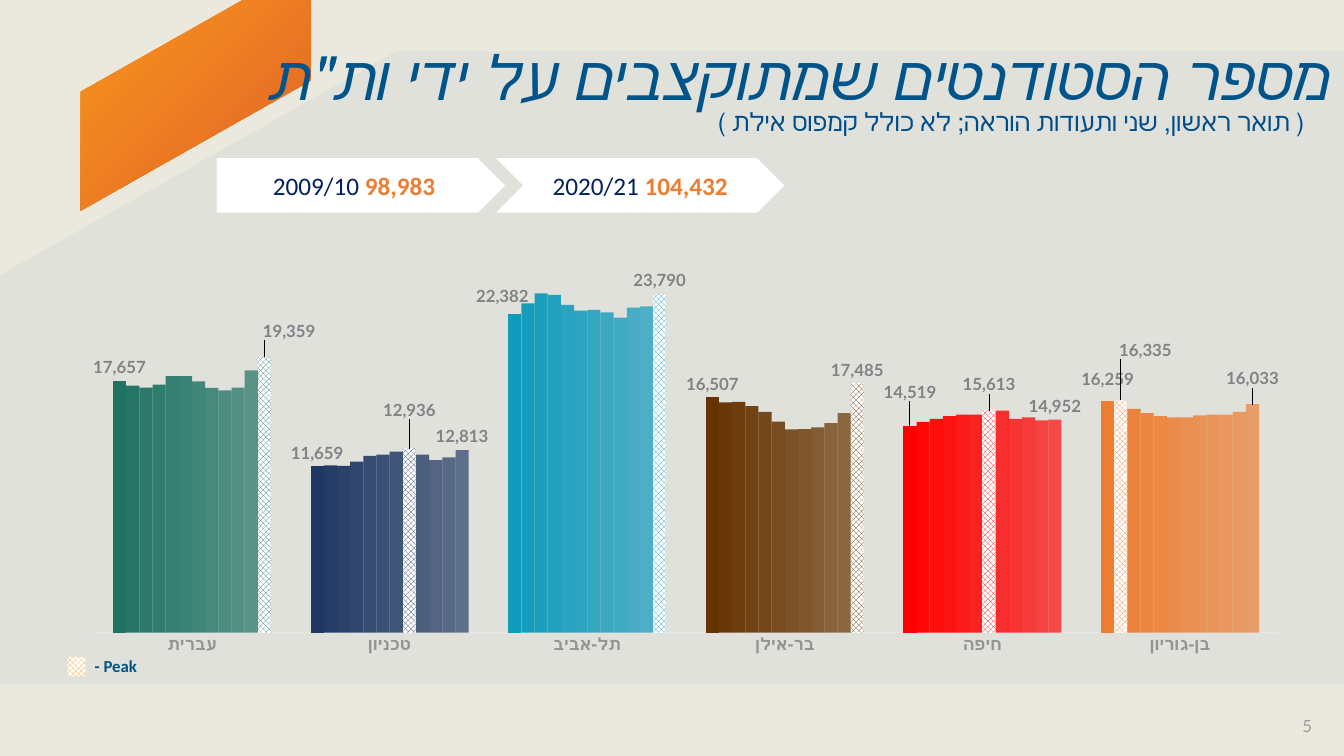
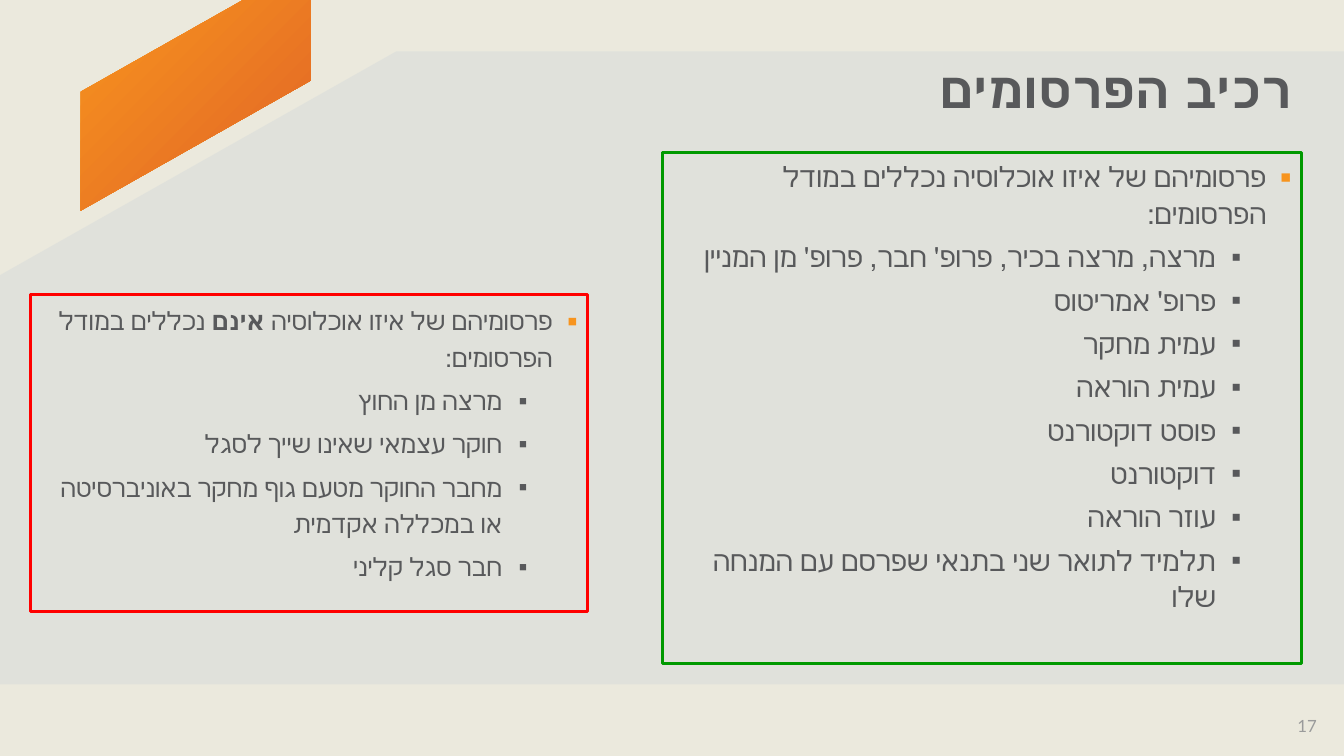
from lxml import etree
from pptx import Presentation
from pptx.chart.data import CategoryChartData
from pptx.dml.color import RGBColor
from pptx.enum.chart import XL_CHART_TYPE, XL_LABEL_POSITION, XL_TICK_MARK
from pptx.enum.dml import MSO_PATTERN
from pptx.enum.shapes import MSO_SHAPE
from pptx.enum.text import MSO_ANCHOR, MSO_AUTO_SIZE, PP_ALIGN
from pptx.oxml import parse_xml
from pptx.oxml.ns import nsdecls, qn
from pptx.util import Inches, Pt

LEFT, MID, RIGHT = PP_ALIGN.LEFT, PP_ALIGN.CENTER, PP_ALIGN.RIGHT
MIDDLE = MSO_ANCHOR.MIDDLE
FIXED = MSO_AUTO_SIZE.NONE
RECT, PLATE, CHEVRON = MSO_SHAPE.RECTANGLE, MSO_SHAPE.PENTAGON, MSO_SHAPE.CHEVRON
CHECK = MSO_PATTERN.LARGE_CHECKER_BOARD
COLUMN = XL_CHART_TYPE.COLUMN_CLUSTERED
OUTSIDE = XL_LABEL_POSITION.OUTSIDE_END
NO_TICK = XL_TICK_MARK.NONE

rgb = RGBColor.from_string
SAND, MIST, WHITE = "EBE9DD", "CFD6DA", "FFFFFF"
AMBER, RUST, ORANGE = "F7941E", "E16327", "ED7D31"
INK, BLUE, NAVY = "58595B", "005489", "002060"


def paint(fill, tint, alpha=100, check=False):
    if check:
        fill.patterned()
        fill.pattern = CHECK
        fill.fore_color.rgb = rgb(tint)
        fill.back_color.rgb = rgb(WHITE)
        return
    fill.solid()
    fill.fore_color.rgb = rgb(tint)
    if alpha < 100:
        node = fill._xPr.find(".//" + qn("a:srgbClr"))
        etree.SubElement(node, qn("a:alpha"), val=str(alpha * 1000))


def style(para, face, size, tint, side):
    para.alignment = side
    if side == RIGHT:
        para._p.get_or_add_pPr().set("rtl", "1")
    font = para.font
    font.name, font.size = face, Pt(size)
    font.color.rgb = rgb(tint)
    return font


prs = Presentation()
prs.slide_width, prs.slide_height = Inches(13.33), Inches(7.5)
paint(prs.slide_master.background.fill, SAND)

bands = [
    (AMBER, [(0.73, 7), (12.6, 7), (12.6, 7.5), (0.73, 7.5)]),
    (MIST, [(13.33, 0.51), (13.33, 6.79), (0, 6.79), (0, 2.73), (3.93, 0.51)]),
    (SAND, [(0, 6.89), (13.33, 6.89), (13.33, 7.5), (0, 7.5)]),
    (RUST, [(2.41, 0), (3.08, 0), (3.08, 0.8), (0.8, 2.09), (0.8, 0.91)]),
]
pages = [
    ("5", "מספר הסטודנטים שמתוקצבים על ידי ות\"ת", (2.16, 0.33, 11.12, 0.84),
     "Calibri", 44, BLUE, False),
    ("17", "רכיב הפרסומים", (1.18, 0.49, 11.73, 0.85), "Lato", 36, INK, True),
]
deck = []
for num, head, spot, face, size, tint, bold in pages:
    slide = prs.slides.add_slide(prs.slide_layouts[5])
    shapes = slide.shapes
    for shade, points in bands:
        if len(points) == 4:
            (x, y), (right, low) = points[0], points[2]
            form = shapes.add_shape(RECT, *map(Inches, (x, y, right - x, low - y)))
        else:
            dots = [(Inches(x), Inches(y)) for x, y in points]
            pen = shapes.build_freeform(*dots[0])
            pen.add_line_segments(dots[1:], close=True)
            form = pen.convert_to_shape()
        form.shadow.inherit = False
        form.line.fill.background()
        if shade == RUST:
            form.fill.gradient()
            form.fill.gradient_angle = 315
            for stop, hue in zip(form.fill.gradient_stops, (AMBER, RUST)):
                stop.color.rgb = rgb(hue)
        else:
            paint(form.fill, shade, 38 if shade == MIST else 100)

    title = shapes.title
    shapes._spTree.append(title._element)
    title.left, title.top, title.width, title.height = map(Inches, spot)
    frame = title.text_frame
    frame.text = head
    frame.vertical_anchor, frame.auto_size = MIDDLE, FIXED
    if bold:
        frame.paragraphs[0].line_spacing = 0.9
    font = style(frame.paragraphs[0], face, size, tint, RIGHT)
    font.bold, font.italic = bold, not bold

    frame = shapes.add_textbox(*map(Inches, (12.6, 7, 0.73, 0.4))).text_frame
    frame.text, frame.vertical_anchor = num, MIDDLE
    style(frame.paragraphs[0], "Lato", 12, "9A9B9B", MID)
    deck.append(shapes)

shapes = deck[0]
notes = [
    ("( תואר ראשון, שני ותעודות הוראה; לא כולל קמפוס אילת )",
     (2.02, 1.01, 11.02, 0.4), 18, "004D8C", RIGHT),
    ("- Peak", (0.84, 6.46, 0.8, 0.3), 12, BLUE, LEFT),
]
for words, spot, size, tint, side in notes:
    frame = shapes.add_textbox(*map(Inches, spot)).text_frame
    frame.word_wrap, frame.text = True, words
    style(frame.paragraphs[0], "Calibri", size, tint, side).bold = side == LEFT

key = shapes.add_shape(RECT, *map(Inches, (0.67, 6.52, 0.18, 0.19)))
key.shadow.inherit = False
key.line.fill.background()
paint(key.fill, AMBER, check=True)

years = [(PLATE, 2.15, "2009/10 ", "98,983"), (CHEVRON, 4.92, "2020/21 ", "104,432")]
for kind, left, year, count in years:
    arrow = shapes.add_shape(kind, *map(Inches, (left, 1.57, 2.86, 0.54)))
    arrow.shadow.inherit = False
    arrow.line.fill.background()
    paint(arrow.fill, WHITE)
    arrow.text_frame.vertical_anchor = MIDDLE
    para = arrow.text_frame.paragraphs[0]
    style(para, "Calibri", 18, NAVY, MID)
    for words, tint in ((year, NAVY), (count, ORANGE)):
        run = para.add_run()
        run.text = words
        run.font.color.rgb = rgb(tint)
        run.font.bold = tint == ORANGE

schools = [
    ("עברית", "1F7363", 11),
    ("טכניון", "1F3763", 7),
    ("תל-אביב", "109BBC", 11),
    ("בר-אילן", "663300", 11),
    ("חיפה", "FF0000", 6),
    ("בן-גוריון", ORANGE, 1),
]
counts = [
    (17657, 11659, 22382, 16507, 14519, 16259),
    (17332, 11734, 23102, 16161, 14783, 16335),
    (17200, 11700, 23800, 16200, 15000, 15700),
    (17400, 12000, 23700, 15900, 15200, 15400),
    (18000, 12400, 23000, 15500, 15300, 15200),
    (18000, 12500, 22600, 14800, 15300, 15100),
    (17628, 12707, 22643, 14259, 15613, 15108),
    (17169, 12936, 22473, 14280, 15578, 15248),
    (17000, 12500, 22100, 14400, 15000, 15300),
    (17200, 12100, 22800, 14700, 15100, 15300),
    (18400, 12300, 22900, 15400, 14900, 15500),
    (19359, 12813, 23790, 17485, 14952, 16033),
]
hues = [AMBER, RUST, "F37421", "828487", "A5A7A9", MIST,
        "A05A06", "8B3A13", "9D4308", "1F7363", "626466", "6F8490"]
shifts = {
    (0, 2): (-0.01, -0.01), (0, 4): (0, -0.05), (0, 5): (0, -0.02),
    (1, 5): (0.02, -0.09), (6, 4): (0, -0.03), (7, 1): (0, -0.06),
    (11, 0): (0.02, -0.03), (11, 5): (0, -0.03),
}
data = CategoryChartData(number_format="#,##0")
data.categories = [school[0] for school in schools]
for i, row in enumerate(counts):
    data.add_series(f"Series {i + 1}", row)
chart = shapes.add_chart(COLUMN, *map(Inches, (0.68, 2.52, 12.25, 4.04)), data).chart
chart.has_legend = chart.has_title = False
chart.font.name, chart.font.size, chart.font.bold = "Lato", Pt(12), True
chart.font.color.rgb = rgb("818285")
axis = chart.value_axis
axis.visible = axis.has_major_gridlines = False
axis.minimum_scale, axis.maximum_scale = 0, 26000
axis = chart.category_axis
axis.major_tick_mark = axis.minor_tick_mark = NO_TICK
axis.format.line.color.rgb = rgb("E6E6E7")
axis.format.line.width = Pt(0.75)
font = axis.tick_labels.font
font.name, font.size, font.bold = "Lato", Pt(12), True
font.color.rgb = rgb("929395")

plot = chart.plots[0]
plot.gap_width, plot.overlap, plot.vary_by_categories = 300, 0, False
area = plot._element.getparent()
for old in area.findall(qn("c:layout")):
    area.remove(old)
area.insert(0, parse_xml(
    f'<c:layout {nsdecls("c")}><c:manualLayout><c:layoutTarget val="inner"/>'
    '<c:xMode val="edge"/><c:yMode val="edge"/><c:x val="0.02"/><c:y val="0.02"/>'
    '<c:w val="0.96"/><c:h val="0.91"/></c:manualLayout></c:layout>'))

last = len(counts) - 1
tagged = {0, last} | {school[2] for school in schools}
for i, series in enumerate(plot.series):
    paint(series.format.fill, hues[i])
    for j, (name, tint, peak) in enumerate(schools):
        point = series.points[j]
        paint(point.format.fill, tint, 100 - 3 * i, i == peak)
        if i not in (0, peak, last) or (i == 0 and j < 2):
            continue
        point.data_label.position = OUTSIDE
        if (i, j) in shifts:
            dx, dy = shifts[i, j]
            label = point.data_label._get_or_add_dLbl()
            for old in label.findall(qn("c:layout")):
                label.remove(old)
            label.insert(1, parse_xml(
                f'<c:layout {nsdecls("c")}><c:manualLayout><c:x val="{dx}"/>'
                f'<c:y val="{dy}"/></c:manualLayout></c:layout>'))
    if i not in tagged:
        continue
    labels = series.data_labels
    labels.show_value = i == 0
    if i == 0:
        labels.position = OUTSIDE
    labels._element.append(parse_xml(
        f'<c:extLst {nsdecls("c")}><c:ext uri="{{CE6537A1-D6FC-4f65-9D91-7224C49458BB}}" '
        'xmlns:c15="http://schemas.microsoft.com/office/drawing/2012/chart">'
        f'<c15:showLeaderLines val="{int(i > 0)}"/></c:ext></c:extLst>'))

shapes = deck[1]
lists = [
    ((6.57, 1.51, 6.34, 5.07), "009900", "Lato", 20,
     ["פרסומיהם של איזו אוכלוסיה נכללים במודל הפרסומים:"],
     ["מרצה, מרצה בכיר, פרופ' חבר, פרופ' מן המניין", "פרופ' אמריטוס",
      "עמית מחקר", "עמית הוראה", "פוסט דוקטורנט", "דוקטורנט", "עוזר הוראה",
      "תלמיד לתואר שני בתנאי שפרסם עם המנחה שלו"]),
    ((0.3, 2.92, 5.53, 3.15), "FF0000", "Calibri", 18,
     ["פרסומיהם של איזו אוכלוסיה ", "אינם", " נכללים במודל הפרסומים:"],
     ["מרצה מן החוץ", "חוקר עצמאי שאינו שייך לסגל",
      "מחבר החוקר מטעם גוף מחקר באוניברסיטה או במכללה אקדמית",
      "חבר סגל קליני"]),
]
for spot, edge, face, size, lead, items in lists:
    box = shapes.add_textbox(*map(Inches, spot))
    box.line.color.rgb, box.line.width = rgb(edge), Pt(2.25)
    frame = box.text_frame
    frame.word_wrap = True
    for i, parts in enumerate([lead] + [[item] for item in items]):
        para = frame.add_paragraph() if i else frame.paragraphs[0]
        para.line_spacing = Pt(26)
        if i:
            para.level, para.space_before = 1, Pt(5)
        props = para._p.get_or_add_pPr()
        props.set("marL", str(Inches(0.75 if i else 0.25)))
        props.set("indent", str(Inches(-0.25)))
        mark = etree.SubElement(props, qn("a:buClr"))
        etree.SubElement(mark, qn("a:srgbClr"), val=INK if i else AMBER)
        etree.SubElement(props, qn("a:buSzPct"), val="100000" if i else "120000")
        etree.SubElement(props, qn("a:buFont"), typeface="Arial")
        etree.SubElement(props, qn("a:buChar"), char="▪")
        style(para, face, size, INK, RIGHT)
        for k, part in enumerate(parts):
            run = para.add_run()
            run.text = part
            if k == 1:
                run.font.bold = True

prs.save("out.pptx")
